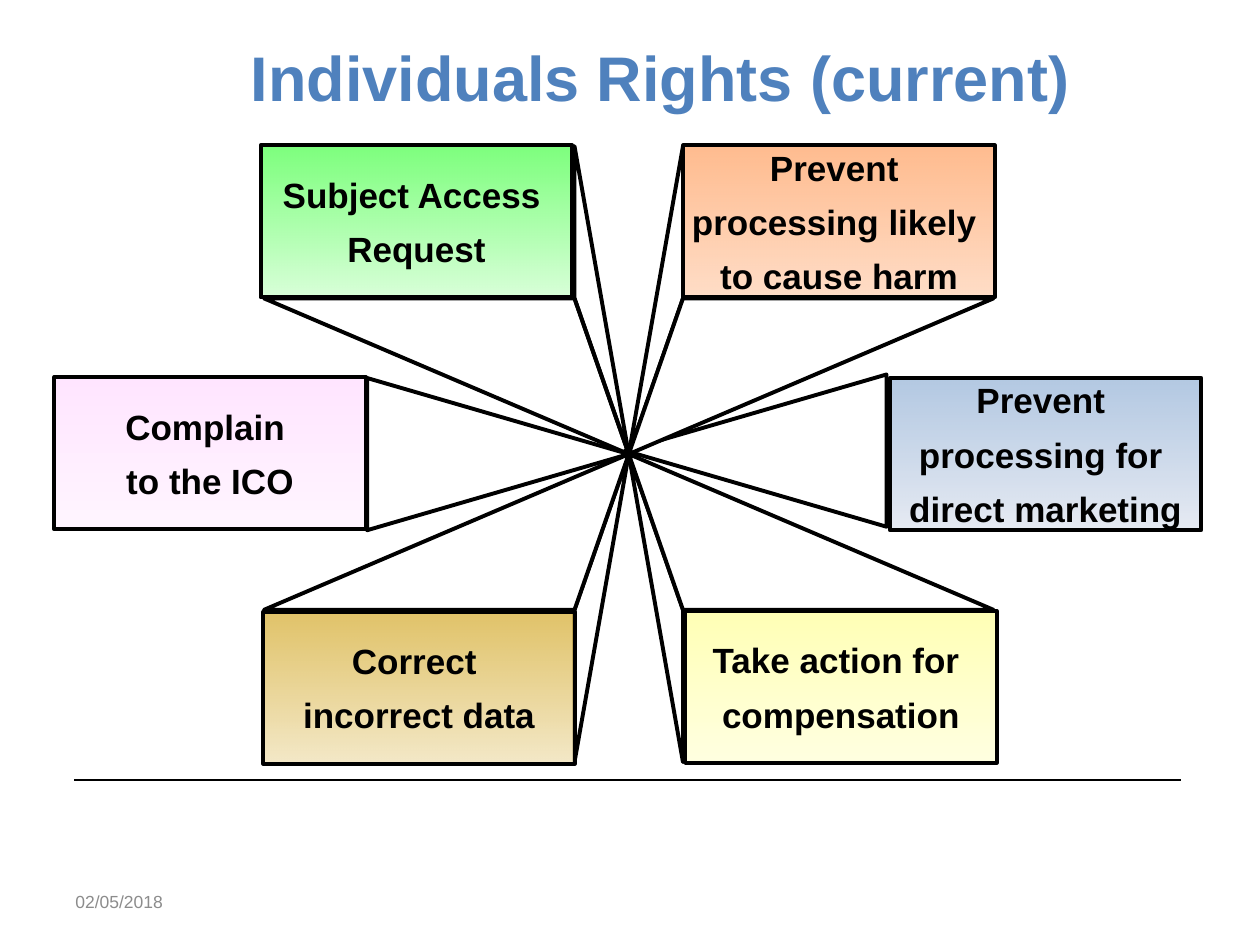
from dataclasses import dataclass
from typing import Any

import lxml.etree
import pptx
import pptx.dml.color
import pptx.enum.shapes
import pptx.enum.text
import pptx.oxml.ns
import pptx.util

Pt = pptx.util.Pt
qn = pptx.oxml.ns.qn
CENTER = pptx.enum.text.PP_ALIGN.CENTER
MIDDLE = pptx.enum.text.MSO_ANCHOR.MIDDLE

# All lengths are in points
HUB = (359.3, 259.5)
RIGHT_HUB = (357.1, 257.5)
BOX_WIDTH, BOX_HEIGHT = 178, 87
INNER_X, OUTER_X = 31, 208.5
INNER_Y, OUTER_Y = 89, 176
SIDE_X, SIDE_Y = 149.5, 43.5
OUTLINE = 2.25


@dataclass
class Ray:
    """A triangle from the hub to two points given as offsets from it."""
    first: tuple[float, float]
    second: tuple[float, float]
    hub: tuple[float, float] = HUB
    filled: bool = True


@dataclass
class Right:
    """A labelled box, its two gradient stops (colour, opacity) and its ray."""
    lines: list[str]
    left: float
    top: float
    stops: list[tuple[str, int]]
    ray: Ray


def side_ray(x_sign: int, y_sign: int) -> Ray:
    return Ray((x_sign * INNER_X, y_sign * OUTER_Y), (x_sign * INNER_X, y_sign * INNER_Y))


def flat_ray(x_sign: int, y_sign: int, filled: bool = True) -> Ray:
    return Ray((x_sign * OUTER_X, y_sign * INNER_Y), (x_sign * INNER_X, y_sign * INNER_Y),
               filled=filled)


def level_ray(x_sign: int, hub: tuple[float, float]) -> Ray:
    return Ray((x_sign * SIDE_X, -SIDE_Y), (x_sign * SIDE_X, SIDE_Y), hub)


RIGHTS = [
    Right(["Complain ", "to the ICO"], 31, 215.5,
          [("FFCCFF", 51), ("FFEDFF", 51)], level_ray(-1, HUB)),
    Right(["Correct ", "incorrect data"], 150.5, 349.5,
          [("CC9900", 59), ("EDDBA6", 62)], flat_ray(-1, 1)),
    Right(["Take action for ", "compensation"], 391.5, 349,
          [("FFFF66", 48), ("FFFFC0", 48)], flat_ray(1, 1)),
    Right(["Prevent ", "processing for ", "direct marketing"], 508.5, 216,
          [("4F81BD", 43), ("CAD3E5", 46)], level_ray(1, RIGHT_HUB)),
    Right(["Prevent ", "processing likely ", "to cause harm"], 390.5, 83,
          [("FF6600", 44), ("FFB686", 46)], flat_ray(1, -1)),
    Right(["Subject Access ", "Request"], 149, 83,
          [("00FF00", 51), ("B6FFB6", 52)], flat_ray(-1, -1, filled=False)),
]


def color(value: str) -> pptx.dml.color.RGBColor:
    return pptx.dml.color.RGBColor.from_string(value)


def apply_format(target: Any, values: dict[str, Any]) -> None:
    for name, value in values.items():
        setattr(target, name, value)


def format_font(paragraph: Any, size: float, hex_color: str, bold: bool) -> None:
    apply_format(paragraph.font, {"name": "Arial", "size": Pt(size), "bold": bold})
    paragraph.font.color.rgb = color(hex_color)


def format_outline(shape: Any, width: float = OUTLINE) -> None:
    shape.line.width = Pt(width)
    shape.line.color.rgb = color("000000")


def draw_ray(slide: Any, ray: Ray) -> None:
    hub_x, hub_y = ray.hub
    corners = [(Pt(hub_x + x), Pt(hub_y + y)) for x, y in (ray.first, ray.second)]
    builder = slide.shapes.build_freeform(Pt(hub_x), Pt(hub_y))
    builder.add_line_segments(corners, close=True)
    shape = builder.convert_to_shape()
    shape.shadow.inherit = False
    if ray.filled:
        shape.fill.solid()
        shape.fill.fore_color.rgb = color("FFFFFF")
    else:
        shape.fill.background()
    format_outline(shape)


def draw_box(slide: Any, right: Right) -> None:
    shape = slide.shapes.add_shape(
        pptx.enum.shapes.MSO_SHAPE.RECTANGLE,
        Pt(right.left), Pt(right.top), Pt(BOX_WIDTH), Pt(BOX_HEIGHT))
    shape.shadow.inherit = False

    # Translucent gradient running downwards
    shape.fill.gradient()
    shape.fill.gradient_angle = 270
    for stop, (hex_color, _) in zip(shape.fill.gradient_stops, right.stops):
        stop.color.rgb = color(hex_color)
    color_elements = list(shape._element.spPr.iter(qn("a:srgbClr")))
    for element, (_, opacity) in zip(color_elements, right.stops):
        lxml.etree.SubElement(element, qn("a:alpha")).set("val", str(opacity * 1000))
    format_outline(shape)

    # Label, one paragraph a line
    frame = shape.text_frame
    apply_format(frame, {"word_wrap": False, "vertical_anchor": MIDDLE})
    frame.text = "\n".join(right.lines)
    for index, paragraph in enumerate(frame.paragraphs):
        paragraph.alignment = CENTER
        if index:
            paragraph.space_before = Pt(7)
        format_font(paragraph, 20, "000000", True)


def draw_title(slide: Any) -> None:
    title = slide.shapes.title
    apply_format(title, {"left": Pt(99.4), "top": Pt(15), "width": Pt(556), "height": Pt(57)})
    frame = title.text_frame
    frame.text = "Individuals Rights (current)"
    apply_format(frame, {
        "margin_left": 0, "margin_right": 0, "margin_top": Pt(1.5), "margin_bottom": Pt(1.5),
        "vertical_anchor": MIDDLE, "word_wrap": True,
        "auto_size": pptx.enum.text.MSO_AUTO_SIZE.NONE})
    frame.paragraphs[0].alignment = CENTER
    format_font(frame.paragraphs[0], 36, "4F81BD", True)


def draw_footer(slide: Any) -> None:
    rule = slide.shapes.add_connector(
        pptx.enum.shapes.MSO_CONNECTOR.STRAIGHT, Pt(42.5), Pt(445.7), Pt(674.6), Pt(445.7))
    format_outline(rule, 1)
    lxml.etree.SubElement(rule._element.spPr, qn("a:effectLst"))

    date = slide.shapes.add_textbox(Pt(36), Pt(500.5), Pt(168), Pt(28.8))
    apply_format(date.text_frame, {"word_wrap": True, "vertical_anchor": MIDDLE})
    date.text_frame.text = "02/05/2018"
    format_font(date.text_frame.paragraphs[0], 10, "8C8C8C", False)


def main() -> None:
    presentation = pptx.Presentation()
    apply_format(presentation, {"slide_width": Pt(720), "slide_height": Pt(540)})
    slide = presentation.slides.add_slide(presentation.slide_layouts[5])
    draw_title(slide)
    draw_footer(slide)

    # Narrow rays first, then each box over its own ray
    for y_sign in (-1, 1):
        for x_sign in (-1, 1):
            draw_ray(slide, side_ray(x_sign, y_sign))
    for right in RIGHTS:
        draw_ray(slide, right.ray)
        draw_box(slide, right)
    presentation.save("out.pptx")


if __name__ == "__main__":
    main()
